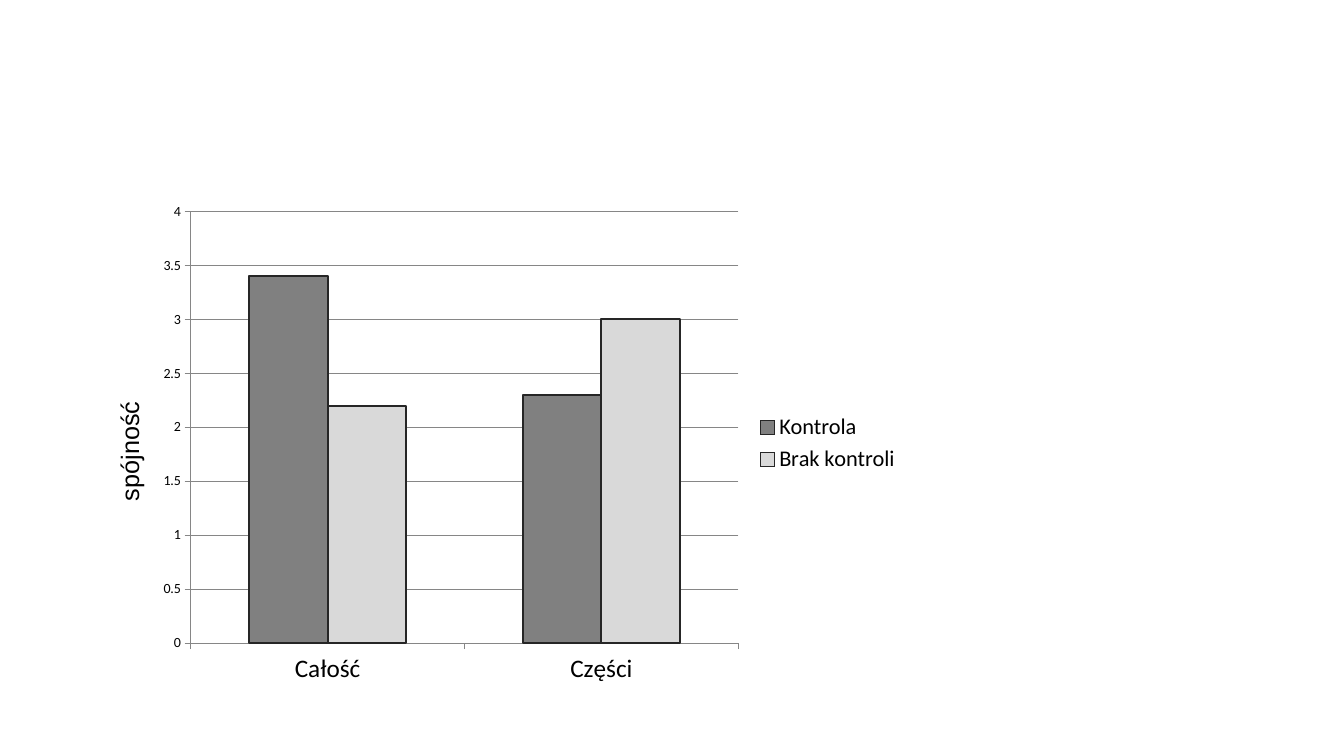
from pptx import Presentation
from pptx.chart.data import CategoryChartData
from pptx.dml.color import RGBColor
from pptx.enum.chart import XL_CHART_TYPE, XL_LEGEND_POSITION, XL_TICK_MARK
from pptx.enum.text import MSO_AUTO_SIZE
from pptx.util import Inches, Pt

CLUSTERED = XL_CHART_TYPE.COLUMN_CLUSTERED
LEGEND_RIGHT = XL_LEGEND_POSITION.RIGHT
TICK_OUTSIDE = XL_TICK_MARK.OUTSIDE
GROW = MSO_AUTO_SIZE.SHAPE_TO_FIT_TEXT

COLORS = {
    "text": "000000",
    "axis": "868686",
    "outline": "262626",
    "Kontrola": "808080",
    "Brak kontroli": "D9D9D9",
}
CATEGORIES = ["Całość", "Części"]
COHERENCE = {"Kontrola": [3.4, 2.3], "Brak kontroli": [2.2, 3]}


def color(name):
    """Return the named colour."""
    return RGBColor.from_string(COLORS[name])


def set_font(font, size, name="Calibri"):
    """Set the face, size and text colour of a font."""
    font.name = name
    font.size = Pt(size)
    font.color.rgb = color("text")


def set_line(line, name, width):
    """Set the colour and width of a line."""
    line.color.rgb = color(name)
    line.width = Pt(width)


def format_axis(axis, size):
    """Format the labels, tick marks and line of an axis."""
    axis.major_tick_mark = TICK_OUTSIDE
    set_font(axis.tick_labels.font, size)
    set_line(axis.format.line, "axis", 0.75)


def add_coherence_chart(slide):
    """Add the clustered column chart with its legend."""
    data = CategoryChartData()
    data.categories = CATEGORIES
    for name, values in COHERENCE.items():
        data.add_series(name, values)
    chart = slide.shapes.add_chart(
        CLUSTERED, Inches(1.47), Inches(1.92), Inches(7.56), Inches(4.96), data
    ).chart
    set_font(chart.font, 10)
    chart.has_title = False
    chart.has_legend = True
    chart.legend.position = LEGEND_RIGHT
    chart.legend.include_in_layout = False
    set_font(chart.legend.font, 16)

    format_axis(chart.category_axis, 18)
    value_axis = chart.value_axis
    format_axis(value_axis, 10)
    value_axis.minimum_scale = 0
    value_axis.maximum_scale = 4
    value_axis.major_unit = 0.5
    value_axis.has_major_gridlines = True
    set_line(value_axis.major_gridlines.format.line, "axis", 0.75)

    plot = chart.plots[0]
    plot.gap_width = 150
    plot.overlap = 0
    plot.vary_by_categories = False
    for series in plot.series:
        series.format.fill.solid()
        series.format.fill.fore_color.rgb = color(series.name)
        set_line(series.format.line, "outline", 1.5)


def add_axis_label(slide, text):
    """Add the rotated label of the value axis."""
    label = slide.shapes.add_textbox(
        Inches(0.57), Inches(4.16), Inches(1.42), Inches(0.4)
    )
    label.rotation = 270
    text_frame = label.text_frame
    text_frame.word_wrap = True
    text_frame.auto_size = GROW
    text_frame.text = text
    set_font(text_frame.paragraphs[0].runs[0].font, 18, "Arial")


def main():
    """Build the slide and save the presentation."""
    presentation = Presentation()
    presentation.slide_width = Inches(13.33)
    presentation.slide_height = Inches(7.5)
    slide = presentation.slides.add_slide(presentation.slide_layouts[6])
    add_axis_label(slide, "spójność")
    add_coherence_chart(slide)
    presentation.save("out.pptx")


if __name__ == "__main__":
    main()
